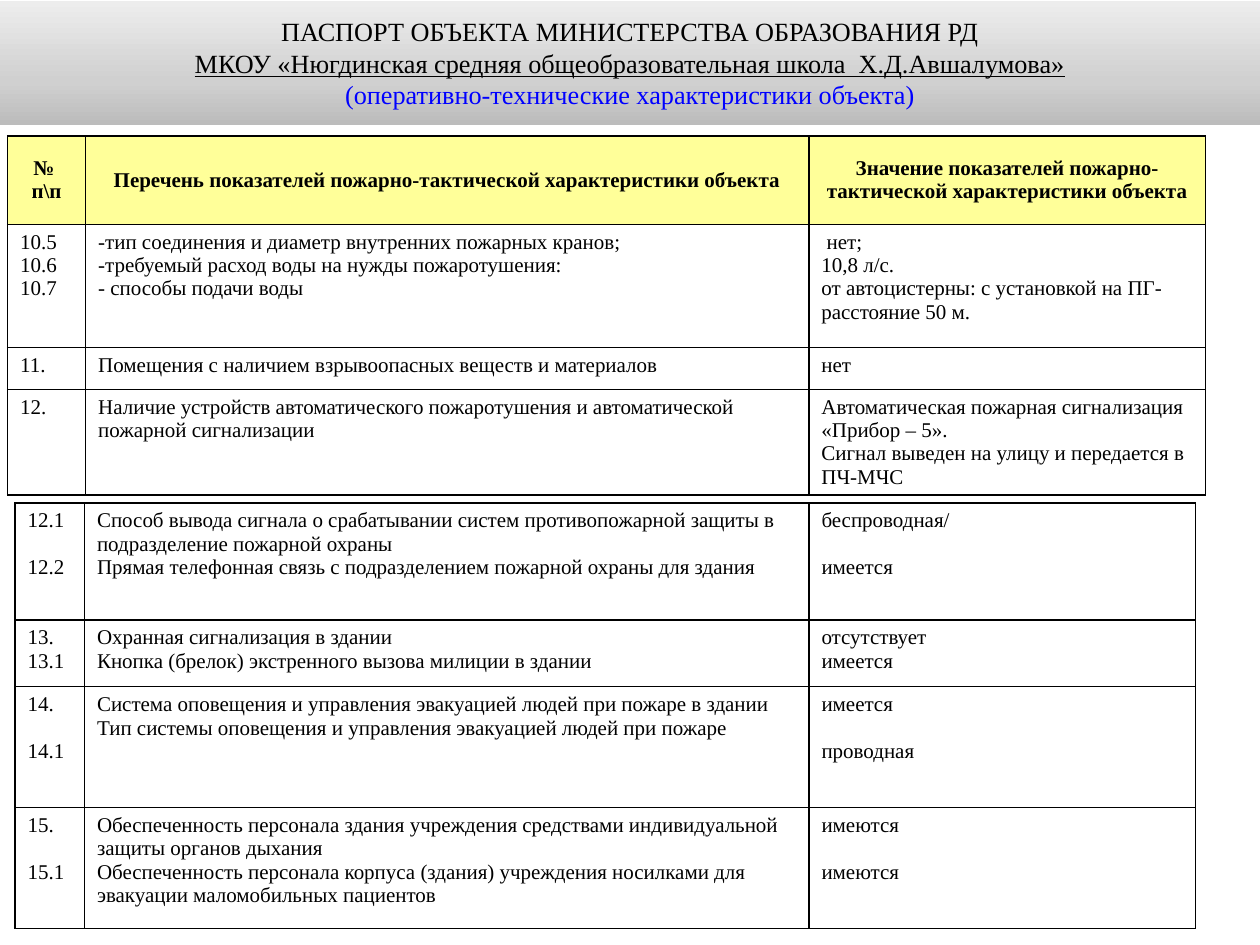
import pptx
import pptx.util
import pptx.dml.color
import pptx.enum.text
import pptx.oxml
import copy
from pptx.util import Inches

COLORS = {"black": "000000", "white": "FFFFFF", "header": "FFFF99", "blue": "0000FF",
          "band_bottom": "BCBCBC", "band_middle": "D0D0D0", "band_top": "EDEDED"}
FONT = "Times New Roman"
NS = 'xmlns:a="http://schemas.openxmlformats.org/drawingml/2006/main"'
CENTER = pptx.enum.text.PP_ALIGN.CENTER
MIDDLE = pptx.enum.text.MSO_ANCHOR.MIDDLE


def rgb(name):
    return pptx.dml.color.RGBColor.from_string(COLORS[name])


def style(paragraph, size, color="black", bold=False):
    for run in paragraph.runs:
        run.font.name = FONT
        run.font.size = pptx.util.Pt(size)
        run.font.bold = bold
        run.font.color.rgb = rgb(color)


passport = pptx.Presentation()
passport.slide_width = Inches(10)
passport.slide_height = Inches(7.5)
slide = passport.slides.add_slide(passport.slide_layouts[5])

heading = slide.shapes.title
heading.left, heading.top = Inches(0), Inches(0.01)
heading.width, heading.height = Inches(10), Inches(0.98)
heading.fill.gradient()
heading.fill.gradient_angle = 90
stops = heading.fill.gradient_stops
first_stop = stops[0]._gs
first_stop.addnext(copy.deepcopy(first_stop))
band = [(0, "band_bottom"), (0.35, "band_middle"), (1, "band_top")]
for stop, (position, color) in zip(heading.fill.gradient_stops, band):
    stop.position = position
    stop.color.rgb = rgb(color)

heading_text = heading.text_frame
heading_text.text = ("ПАСПОРТ ОБЪЕКТА МИНИСТЕРСТВА ОБРАЗОВАНИЯ РД\n"
                     "МКОУ «Нюгдинская средняя общеобразовательная школа  Х.Д.Авшалумова»\n"
                     "(оперативно-технические характеристики объекта)")
heading_text.word_wrap = True
heading_text.auto_size = pptx.enum.text.MSO_AUTO_SIZE.NONE
heading_text.vertical_anchor = MIDDLE
for line, color in zip(heading_text.paragraphs, ["black", "black", "blue"]):
    line.alignment = CENTER
    style(line, 15, color)
heading_text.paragraphs[1].runs[0].font.underline = True

main_rows = [
    ["№ \nп\\п", "Перечень показателей пожарно-тактической характеристики объекта",
     "Значение показателей пожарно-тактической характеристики объекта"],
    ["10.5\n10.6\n10.7",
     "-тип соединения и диаметр внутренних пожарных кранов;\n"
     "требуемый расход воды на нужды пожаротушения:\n способы подачи воды",
     " нет;\n10,8 л/с.\nот автоцистерны: с установкой на ПГ- расстояние 50 м."],
    ["11.", "Помещения с наличием взрывоопасных веществ и материалов", "нет"],
    ["12.", "Наличие устройств автоматического пожаротушения и автоматической "
     "пожарной сигнализации",
     "Автоматическая пожарная сигнализация\n«Прибор – 5».\n"
     "Сигнал выведен на улицу и передается в ПЧ-МЧС"],
]
alarm_rows = [
    ["12.1\n12.2",
     "Способ вывода сигнала о срабатывании систем противопожарной защиты в "
     "подразделение пожарной охраны\n"
     "Прямая телефонная связь с подразделением пожарной охраны для здания",
     "беспроводная/\nимеется"],
    ["13.\n13.1",
     "Охранная сигнализация в здании\nКнопка (брелок) экстренного вызова милиции в здании",
     "отсутствует\nимеется"],
    ["14.\n14.1",
     "Система оповещения и управления эвакуацией людей при пожаре в здании\n"
     "Тип системы оповещения и управления эвакуацией людей при пожаре",
     "имеется\nпроводная"],
    ["15.\n15.1",
     "Обеспеченность персонала здания учреждения средствами индивидуальной "
     "защиты органов дыхания\n"
     "Обеспеченность персонала корпуса (здания) учреждения носилками для "
     "эвакуации маломобильных пациентов",
     "имеются\nимеются"],
]
sections = [
    (main_rows, 0.06, 1.08, [0.62, 5.74, 3.15], [0.7, 0.98, 0.33, 0.71], True, []),
    (alarm_rows, 0.12, 3.99, [0.55, 5.75, 3.07], [0.93, 0.53, 0.96, 0.96], False, [0, 2, 3]),
]

tables = []
for rows, left, top, widths, heights, has_header, spaced_rows in sections:
    table = slide.shapes.add_table(len(rows), len(widths), Inches(left), Inches(top),
                                   Inches(sum(widths)), Inches(sum(heights))).table
    tables.append(table)
    table.first_row = has_header
    table.horz_banding = False
    for column, width in zip(table.columns, widths):
        column.width = Inches(width)
    for row, height in zip(table.rows, heights):
        row.height = Inches(height)
    for r, texts in enumerate(rows):
        is_header = has_header and r == 0
        for c, text in enumerate(texts):
            cell = table.cell(r, c)
            cell.text_frame.text = text
            for side in ("lnL", "lnR", "lnT", "lnB"):
                cell._tc.get_or_add_tcPr().append(pptx.oxml.parse_xml(
                    f'<a:{side} {NS} w="12700"><a:solidFill>'
                    f'<a:srgbClr val="{COLORS["black"]}"/></a:solidFill></a:{side}>'))
            cell.fill.solid()
            cell.fill.fore_color.rgb = rgb("header" if is_header else "white")
            if is_header:
                cell.vertical_anchor = MIDDLE
            for i, paragraph in enumerate(cell.text_frame.paragraphs):
                style(paragraph, 12, bold=is_header)
                if is_header:
                    paragraph.alignment = CENTER
                if i and c != 1 and r in spaced_rows:
                    paragraph.space_before = pptx.util.Pt(13.5)

for water_item in tables[0].cell(1, 1).text_frame.paragraphs[1:]:
    properties = water_item._p.get_or_add_pPr()
    properties.set("marL", "0")
    properties.set("indent", "0")
    properties.append(pptx.oxml.parse_xml(f'<a:buFont {NS} typeface="{FONT}"/>'))
    properties.append(pptx.oxml.parse_xml(f'<a:buChar {NS} char="-"/>'))

passport.save("out.pptx")
